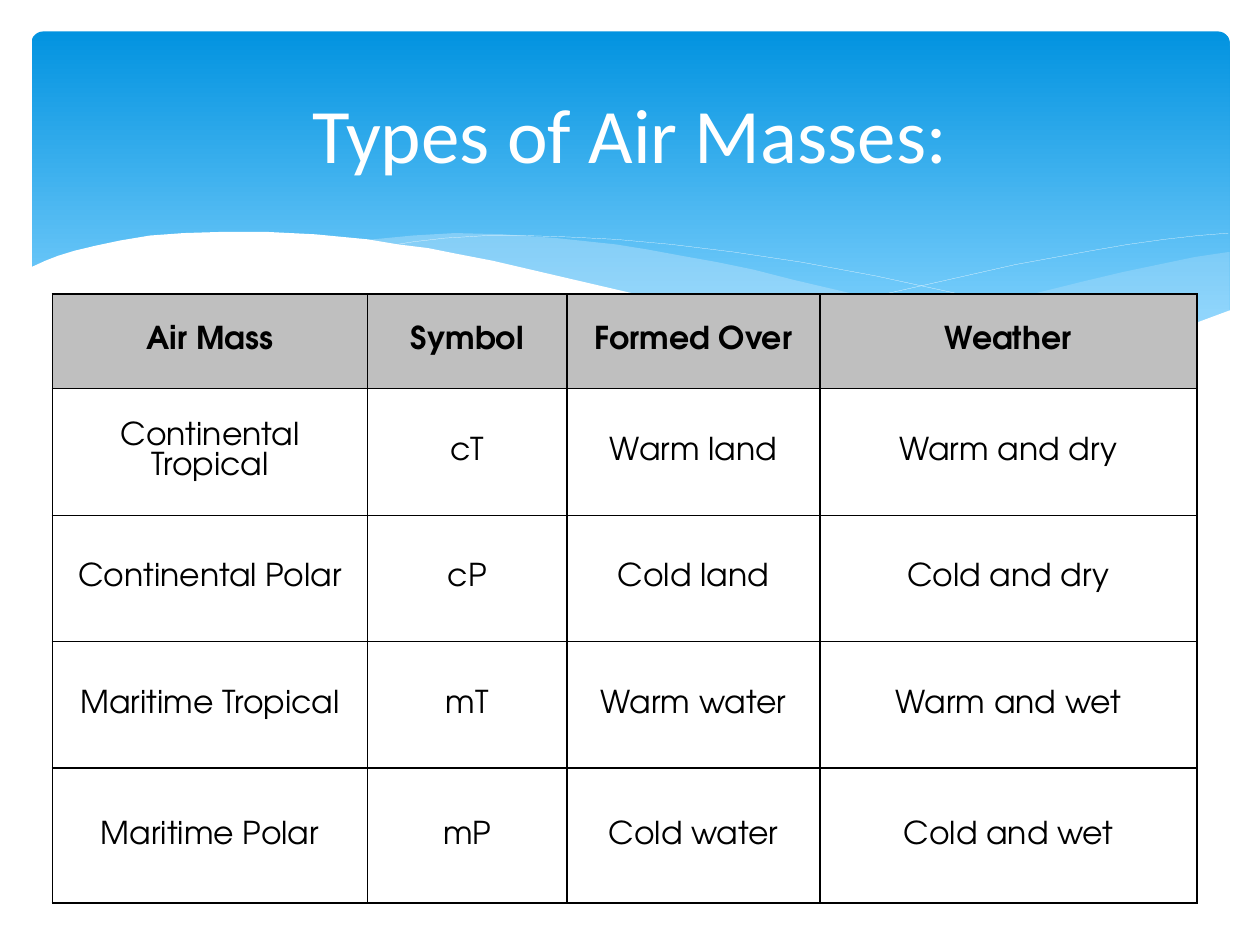
from lxml import etree
from pptx import Presentation
from pptx.dml.color import RGBColor
from pptx.enum.shapes import MSO_SHAPE
from pptx.enum.text import MSO_ANCHOR, PP_ALIGN
from pptx.oxml.ns import qn
from pptx.util import Pt

ROUNDED = MSO_SHAPE.ROUNDED_RECTANGLE
MIDDLE = MSO_ANCHOR.MIDDLE
CENTER = PP_ALIGN.CENTER

COLORS = {
    "sky_top": "0293E0",
    "sky_bottom": "83D3FE",
    "wave": "C6E7FC",
    "white": "FFFFFF",
    "black": "000000",
    "header": "BFBFBF",
}
TITLE_FONT = "Calibri"
TABLE_FONT = "TeX Gyre Adventor"

RIGHT_WAVE = [
    (702, 144), (682.6, 146.9), (663, 151), (641.5, 155.5), (620, 160.6),
    (579.6, 170.6), (542, 178.6), (508.3, 185), (476, 190.8), (497.5, 193.7),
    (517.7, 195.8), (536.4, 198), (553.7, 199.4), (578, 200.2), (601, 199.4),
    (621.4, 198), (640, 195.8), (657.4, 192.2), (673.2, 188.6), (683.3, 185),
    (702.7, 177.8), (702.7, 144),
]
MIDDLE_WAVE = [
    (643, 196.6), (602.6, 190.8), (558, 182.9), (508.3, 172.8), (452.9, 159.8),
    (430.6, 154.1), (409.7, 149.8), (389.5, 146.2), (370, 142.6), (352, 139.7),
    (318.2, 136.1), (287.3, 133.9), (260, 133.2), (236.2, 134.6), (206, 137.5),
    (232.6, 141.1), (260.6, 146.2), (290.9, 151.9), (323.3, 159.8), (353.5, 167),
    (381.6, 172.8), (407.5, 178.6), (432.7, 183.6), (456.5, 187.9), (478.8, 191.5),
    (500.4, 194.4), (520, 196.6), (538.6, 198.7), (556.6, 199.4), (581, 200.2),
    (603.4, 200.2), (624.2, 198.7),
]
FALLING_LINE = [
    (222.5, 140.4), (236.2, 138.2), (254.2, 136.1), (278.6, 134.6), (299.5, 134.6),
    (324, 135.4), (352, 136.8), (383.8, 139.7), (419, 144), (457.9, 149.8),
    (500.4, 157.7), (547.2, 167.8), (598.3, 180.7), (653, 195.8),
]
RISING_LINE = [
    (441.4, 185), (470.2, 177.1), (500.4, 169.2), (538.6, 160.6), (580.3, 151.2),
    (623.5, 143.3), (644.4, 139.7), (665.3, 136.8), (684.7, 134.6), (702, 133.2),
]
WHITE_WAVE = [
    (703.4, 177.1), (684, 184.3), (662.4, 190.8), (638.6, 195.1), (612, 198),
    (582.5, 199.4), (548, 198), (509.8, 194.4), (466.6, 188.6), (416.9, 180),
    (362.2, 167.8), (321.8, 158.4), (281.5, 149), (262.8, 145.4), (244.8, 141.8),
    (227.5, 139.7), (210.2, 136.8), (180, 133.9), (152, 132.5), (127.4, 132.5),
    (105.1, 133.2), (85.7, 134.6), (68.4, 137.5), (54.7, 140.4), (42.5, 143.3),
    (33.1, 146.2), (25.9, 149), (18, 152.6), (16.6, 153.4), (16.6, 236.9),
    (703.4, 236.9),
]

COLUMN_WIDTHS = [180, 114, 144.5, 215.5]
ROW_HEIGHTS = [54, 72.5, 72, 72.5, 77]
AIR_MASSES = [
    ["Air Mass", "Symbol", "Formed Over", "Weather"],
    ["Continental Tropical", "cT", "Warm land", "Warm and dry"],
    ["Continental Polar", "cP", "Cold land", "Cold and dry"],
    ["Maritime Tropical", "mT", "Warm water", "Warm and wet"],
    ["Maritime Polar", "mP", "Cold water", "Cold and wet"],
]


def rgb(name):
    return RGBColor.from_string(COLORS[name])


def write_text(frame, text, font, size, color, bold=False):
    """Put one centred, formatted paragraph into a text frame."""
    para = frame.paragraphs[0]
    para.alignment = CENTER
    span = para.add_run()
    span.text = text
    span.font.name = font
    span.font.size = Pt(size)
    span.font.bold = bold
    span.font.color.rgb = rgb(color)


def add_sky(page):
    sky = page.shapes.add_shape(ROUNDED, Pt(18), Pt(18), Pt(684.7), Pt(194.4))
    sky.adjustments[0] = 0.034
    sky.shadow.inherit = False
    sky.line.fill.background()
    sky.fill.gradient()
    sky.fill.gradient_angle = 270
    stops = zip(sky.fill.gradient_stops, ("sky_top", "sky_bottom"), (0, 0.9))
    for stop, color, position in stops:
        stop.color.rgb = rgb(color)
        stop.position = position


def add_outline(page, points, closed):
    start, *others = [(Pt(x), Pt(y)) for x, y in points]
    builder = page.shapes.build_freeform(*start, scale=1.0)
    builder.add_line_segments(others, close=closed)
    outline = builder.convert_to_shape()
    outline.shadow.inherit = False
    return outline


def add_wave(page, points, color, opacity=100):
    wave = add_outline(page, points, closed=True)
    wave.line.fill.background()
    wave.fill.solid()
    wave.fill.fore_color.rgb = rgb(color)
    if opacity < 100:
        fill_color = wave._element.spPr.find(qn("a:solidFill"))[0]
        etree.SubElement(fill_color, qn("a:alpha"), val=str(opacity * 1000))


def add_wave_line(page, points):
    curve = add_outline(page, points, closed=False)
    curve.fill.background()
    curve.line.color.rgb = rgb("white")
    curve.line.width = Pt(0.1)


def add_borders(cell, color, width):
    properties = cell._tc.get_or_add_tcPr()
    for index, side in enumerate(("lnL", "lnR", "lnT", "lnB")):
        border = etree.Element(qn(f"a:{side}"), w=str(Pt(width)))
        fill = etree.SubElement(border, qn("a:solidFill"))
        etree.SubElement(fill, qn("a:srgbClr"), val=COLORS[color])
        properties.insert(index, border)


def format_cell(cell, text, is_header):
    cell.vertical_anchor = MIDDLE
    cell.margin_left = cell.margin_right = Pt(5)
    cell.margin_top = cell.margin_bottom = Pt(0)
    cell.fill.solid()
    cell.fill.fore_color.rgb = rgb("header" if is_header else "white")
    add_borders(cell, "black", 1)
    write_text(cell.text_frame, text, font=TABLE_FONT, size=18, color="black",
               bold=is_header)


def add_air_mass_table(page):
    frame = page.shapes.add_table(
        len(ROW_HEIGHTS), len(COLUMN_WIDTHS), Pt(30), Pt(168),
        Pt(sum(COLUMN_WIDTHS)), Pt(sum(ROW_HEIGHTS)))
    table = frame.table
    table.first_row = table.horz_banding = False
    for column, width in zip(table.columns, COLUMN_WIDTHS):
        column.width = Pt(width)
    for index, (row, height) in enumerate(zip(table.rows, ROW_HEIGHTS)):
        row.height = Pt(height)
        for cell, text in zip(row.cells, AIR_MASSES[index]):
            format_cell(cell, text, is_header=index == 0)


def place_title(page, text):
    """Fill the title placeholder and bring it in front of the waves."""
    title = page.shapes.title
    title.left, title.top = Pt(36), Pt(26.6)
    title.width, title.height = Pt(648), Pt(98.6)
    title.text_frame.vertical_anchor = MIDDLE
    write_text(title.text_frame, text, font=TITLE_FONT, size=44, color="white")
    page.shapes._spTree.append(title._element)


def main():
    deck = Presentation()
    deck.slide_width, deck.slide_height = Pt(720), Pt(540)
    page = deck.slides.add_slide(deck.slide_layouts[5])
    add_sky(page)
    add_wave(page, RIGHT_WAVE, "wave", opacity=29)
    add_wave(page, MIDDLE_WAVE, "wave", opacity=40)
    add_wave_line(page, FALLING_LINE)
    add_wave_line(page, RISING_LINE)
    add_wave(page, WHITE_WAVE, "white")
    add_air_mass_table(page)
    place_title(page, "Types of Air Masses:")
    deck.save("out.pptx")


if __name__ == "__main__":
    main()
